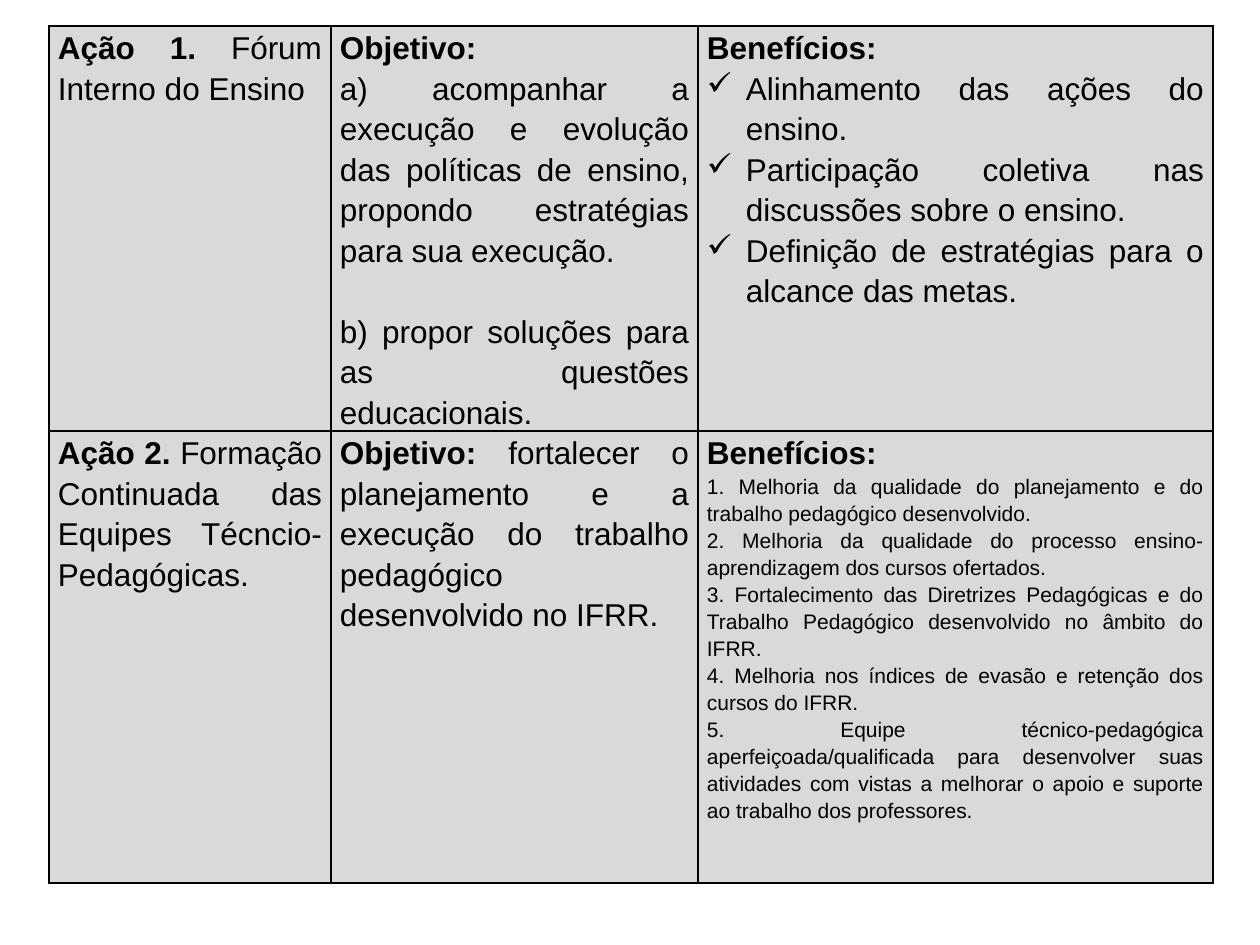
from lxml.etree import SubElement
from pptx import Presentation
from pptx.dml.color import RGBColor
from pptx.enum.text import PP_ALIGN
from pptx.oxml.ns import qn
from pptx.util import Pt

PX = 914400 // 126
COLORS = {"text": "000000", "border": "000000", "cell": "D9D9D9"}
COLUMN_WIDTHS = [282, 367, 515]
ROW_HEIGHTS = [405, 452]
MARGIN = 9
INDENT = 39
BODY, SMALL = 18, 12

# Each paragraph: bold lead, regular text, size, bullet, space before
ROWS = [
    [
        [("Ação 1. ", "Fórum Interno do Ensino", BODY, "", 0)],
        [
            ("Objetivo:", "", BODY, "", 0),
            ("", "a) acompanhar a execução e evolução das políticas de ensino, "
                 "propondo estratégias para sua execução.", BODY, "", 0),
            ("", "b) propor soluções para as questões educacionais.", BODY, "", 23),
        ],
        [
            ("Benefícios:", "", BODY, "", 0),
            ("", "Alinhamento das ações do ensino.", BODY, "✓", 0),
            ("", "Participação coletiva nas discussões sobre o ensino.", BODY, "✓", 0),
            ("", "Definição de estratégias para o alcance das metas.", BODY, "✓", 0),
        ],
    ],
    [
        [("Ação 2. ", "Formação Continuada das Equipes Técncio-Pedagógicas.", BODY, "", 0)],
        [("Objetivo: ", "fortalecer o planejamento e a execução do trabalho "
                        "pedagógico desenvolvido no IFRR.", BODY, "", 0)],
        [
            ("Benefícios:", "", BODY, "", 0),
            ("", "1. Melhoria da qualidade do planejamento e do trabalho "
                 "pedagógico desenvolvido.", SMALL, "", 0),
            ("", "2. Melhoria da qualidade do processo ensino-aprendizagem "
                 "dos cursos ofertados.", SMALL, "", 0),
            ("", "3. Fortalecimento das Diretrizes Pedagógicas e do Trabalho "
                 "Pedagógico desenvolvido no âmbito do IFRR.", SMALL, "", 0),
            ("", "4. Melhoria nos índices de evasão e retenção dos cursos "
                 "do IFRR.", SMALL, "", 0),
            ("", "5. Equipe técnico-pedagógica aperfeiçoada/qualificada para "
                 "desenvolver suas atividades com vistas a melhorar o apoio e "
                 "suporte ao trabalho dos professores.", SMALL, "", 0),
        ],
    ],
]


def style_cell(cell):
    properties = cell._tc.get_or_add_tcPr()
    for side in ("a:lnL", "a:lnR", "a:lnT", "a:lnB"):
        line = SubElement(properties, qn(side), w=str(Pt(1)))
        fill = SubElement(line, qn("a:solidFill"))
        SubElement(fill, qn("a:srgbClr"), val=COLORS["border"])
    cell.fill.solid()
    cell.fill.fore_color.rgb = RGBColor.from_string(COLORS["cell"])
    cell.margin_left = cell.margin_right = MARGIN * PX
    cell.margin_top = cell.margin_bottom = 0


def write_paragraph(para, lead, text, size, bullet, space):
    para.alignment = PP_ALIGN.JUSTIFY
    para.line_spacing = 1.15
    para.space_before = Pt(space)
    if bullet:
        properties = para._p.get_or_add_pPr()
        properties.set("marL", str(INDENT * PX))
        properties.set("indent", str(-INDENT * PX))
        SubElement(properties, qn("a:buChar"), char=bullet)
    for words, bold in ((lead, True), (text, False)):
        if words:
            span = para.add_run()
            span.text = words
            span.font.name = "Arial"
            span.font.size = Pt(size)
            span.font.bold = bold
            span.font.color.rgb = RGBColor.from_string(COLORS["text"])


deck = Presentation()
deck.slide_width = 1260 * PX
deck.slide_height = 945 * PX
page = deck.slides.add_slide(deck.slide_layouts[6])

frame = page.shapes.add_table(
    len(ROW_HEIGHTS), len(COLUMN_WIDTHS), 49 * PX, 26 * PX,
    sum(COLUMN_WIDTHS) * PX, sum(ROW_HEIGHTS) * PX)
table = frame.table
for column, width in zip(table.columns, COLUMN_WIDTHS):
    column.width = width * PX
for row, height in zip(table.rows, ROW_HEIGHTS):
    row.height = height * PX

for row, contents in zip(table.rows, ROWS):
    for cell, paragraphs in zip(row.cells, contents):
        style_cell(cell)
        for index, content in enumerate(paragraphs):
            body = cell.text_frame
            para = body.add_paragraph() if index else body.paragraphs[0]
            write_paragraph(para, *content)

deck.save("out.pptx")
